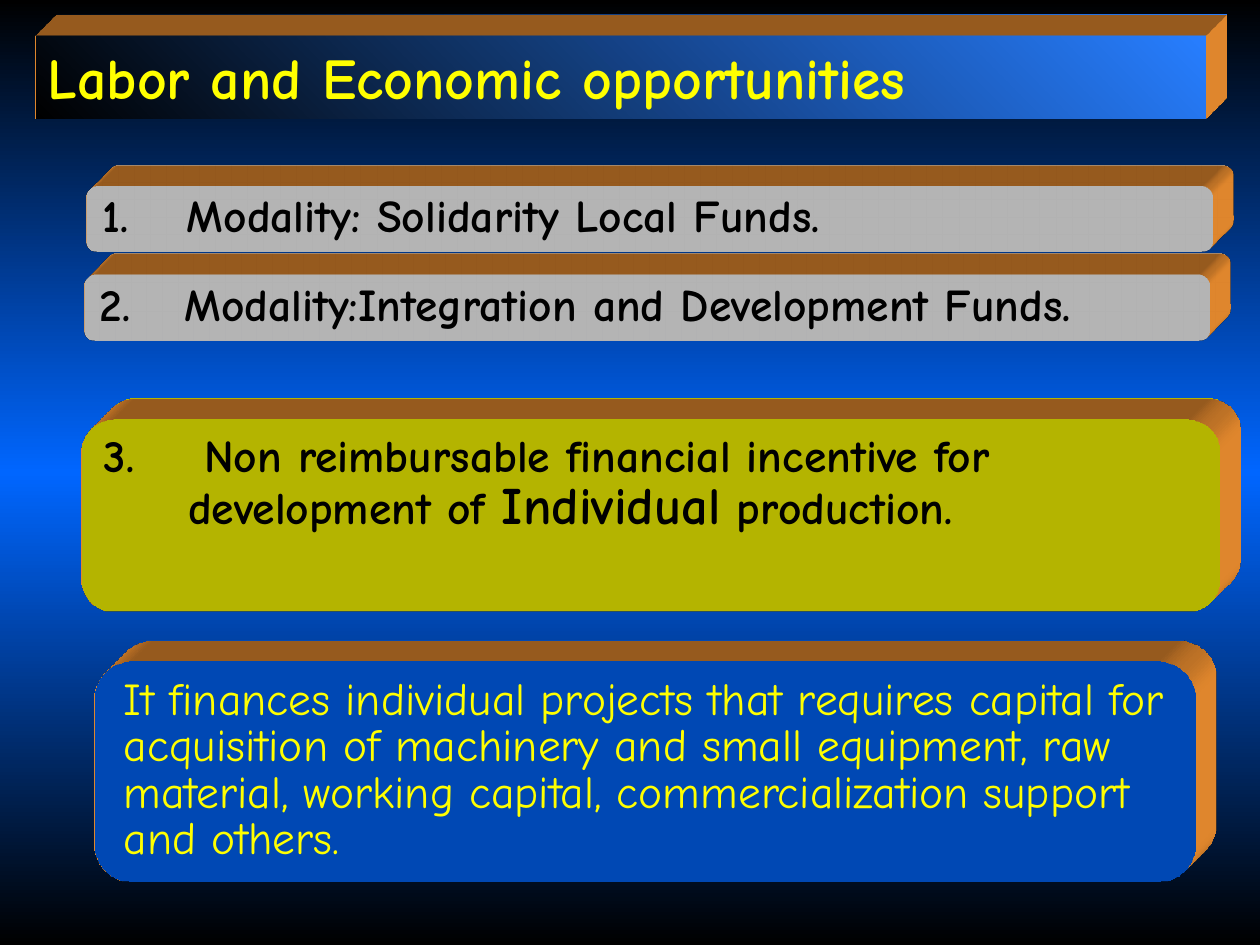
from dataclasses import dataclass
from typing import Optional

from lxml.etree import SubElement
from pptx import Presentation
from pptx.dml.color import RGBColor
from pptx.enum.shapes import MSO_SHAPE
from pptx.enum.text import MSO_ANCHOR, PP_ALIGN
from pptx.oxml.ns import qn
from pptx.util import Inches, Pt

FONT = "Comic Neue"
COLORS = {
    "black": "000000",
    "white": "FFFFFF",
    "yellow": "FFFF00",
    "blue": "0066FF",
    "title_blue": "277EFF",
    "side": "FF9933",
}


@dataclass(frozen=True)
class Run:
    text: str
    size: int = 26


@dataclass(frozen=True)
class Panel:
    left: float
    top: float
    width: float
    height: float
    fill: str
    runs: tuple[Run, ...]
    color: str = "black"
    bold: bool = True
    number: Optional[int] = None


PANELS = (
    Panel(0.69, 1.48, 8.93, 0.52, "white",
          (Run("Modality: Solidarity Local Funds."),), number=1),
    Panel(0.75, 5.25, 8.74, 1.75, "blue",
          (Run("It finances individual projects that requires capital for "
               "acquisition of machinery and small equipment, raw material, "
               "working capital, commercialization support and others."),),
          color="yellow", bold=False),
    Panel(0.67, 2.18, 8.93, 0.52, "white",
          (Run("Modality:Integration and Development Funds."),), number=2),
    Panel(0.65, 3.33, 9.03, 1.52, "yellow",
          (Run(" Non reimbursable financial incentive for development of "),
           Run("Individual", 30), Run(" production.")), number=3),
)


def rgb(name: str) -> RGBColor:
    return RGBColor.from_string(COLORS[name])


def set_gradient(fill, names: tuple[str, ...], angle: int) -> None:
    fill.gradient()
    properties = fill._xPr.find(qn("a:gradFill"))
    stops = properties.find(qn("a:gsLst"))
    for stop in list(stops):
        stops.remove(stop)
    for index, name in enumerate(names):
        position = 100000 * index // (len(names) - 1)
        stop = SubElement(stops, qn("a:gs"), pos=str(position))
        SubElement(stop, qn("a:srgbClr"), val=COLORS[name])
    properties.find(qn("a:lin")).set("ang", str(angle * 60000))


def extrude(shape) -> None:
    properties = shape._element.spPr
    scene = SubElement(properties, qn("a:scene3d"))
    SubElement(scene, qn("a:camera"), prst="legacyObliqueTopRight")
    SubElement(scene, qn("a:lightRig"), rig="legacyFlat3", dir="b")
    solid = SubElement(properties, qn("a:sp3d"), extrusionH="430200",
                       prstMaterial="legacyMatte")
    for edge in ("a:bevelT", "a:bevelB"):
        SubElement(solid, qn(edge), w="13500", h="13500", prst="angle")
    side = SubElement(solid, qn("a:extrusionClr"))
    SubElement(side, qn("a:srgbClr"), val=COLORS["side"])


def add_block(slide, kind: MSO_SHAPE, left: float, top: float,
              width: float, height: float):
    shape = slide.shapes.add_shape(
        kind, Inches(left), Inches(top), Inches(width), Inches(height))
    shape.shadow.inherit = False
    shape.line.fill.background()
    extrude(shape)
    return shape


def write_text(frame, runs: tuple[Run, ...], *, color: str, bold: bool,
               anchor: MSO_ANCHOR, line_spacing: float = 1.0):
    frame.word_wrap = True
    frame.vertical_anchor = anchor
    paragraph = frame.paragraphs[0]
    paragraph.alignment = PP_ALIGN.LEFT
    paragraph.line_spacing = line_spacing
    for part in runs:
        run = paragraph.add_run()
        run.text = part.text
        run.font.name = FONT
        run.font.size = Pt(part.size)
        run.font.bold = bold
        run.font.color.rgb = rgb(color)
    return paragraph


def set_number(paragraph, number: int) -> None:
    properties = paragraph._p.get_or_add_pPr()
    properties.set("marL", str(Inches(0.67)))
    properties.set("indent", str(-Inches(0.67)))
    SubElement(properties, qn("a:buFont"), typeface=FONT)
    SubElement(properties, qn("a:buAutoNum"), type="arabicPeriod",
               startAt=str(number))


def add_panel(slide, panel: Panel) -> None:
    shape = add_block(slide, MSO_SHAPE.ROUNDED_RECTANGLE, panel.left,
                      panel.top, panel.width, panel.height)
    shape.fill.solid()
    shape.fill.fore_color.rgb = rgb(panel.fill)
    paragraph = write_text(shape.text_frame, panel.runs, color=panel.color,
                           bold=panel.bold, anchor=MSO_ANCHOR.TOP,
                           line_spacing=0.85)
    if panel.number:
        set_number(paragraph, panel.number)
    else:
        paragraph._p.get_or_add_pPr().set("marL", str(Inches(0.05)))


def add_title(slide) -> None:
    box = (0.28, 0.28, 9.29, 0.66)
    bar = add_block(slide, MSO_SHAPE.RECTANGLE, *box)
    set_gradient(bar.fill, ("black", "title_blue"), 315)
    title = slide.shapes.title
    title.left, title.top, title.width, title.height = map(Inches, box)
    write_text(title.text_frame, (Run("Labor and Economic opportunities", 33),),
               color="yellow", bold=True, anchor=MSO_ANCHOR.MIDDLE)
    bar._element.addnext(title._element)


def main() -> None:
    presentation = Presentation()
    presentation.slide_width = Inches(10)
    presentation.slide_height = Inches(7.5)
    slide = presentation.slides.add_slide(presentation.slide_layouts[5])
    set_gradient(slide.background.fill, ("black", "blue", "black"), 90)
    add_title(slide)
    for panel in PANELS:
        add_panel(slide, panel)
    presentation.save("out.pptx")


if __name__ == "__main__":
    main()
